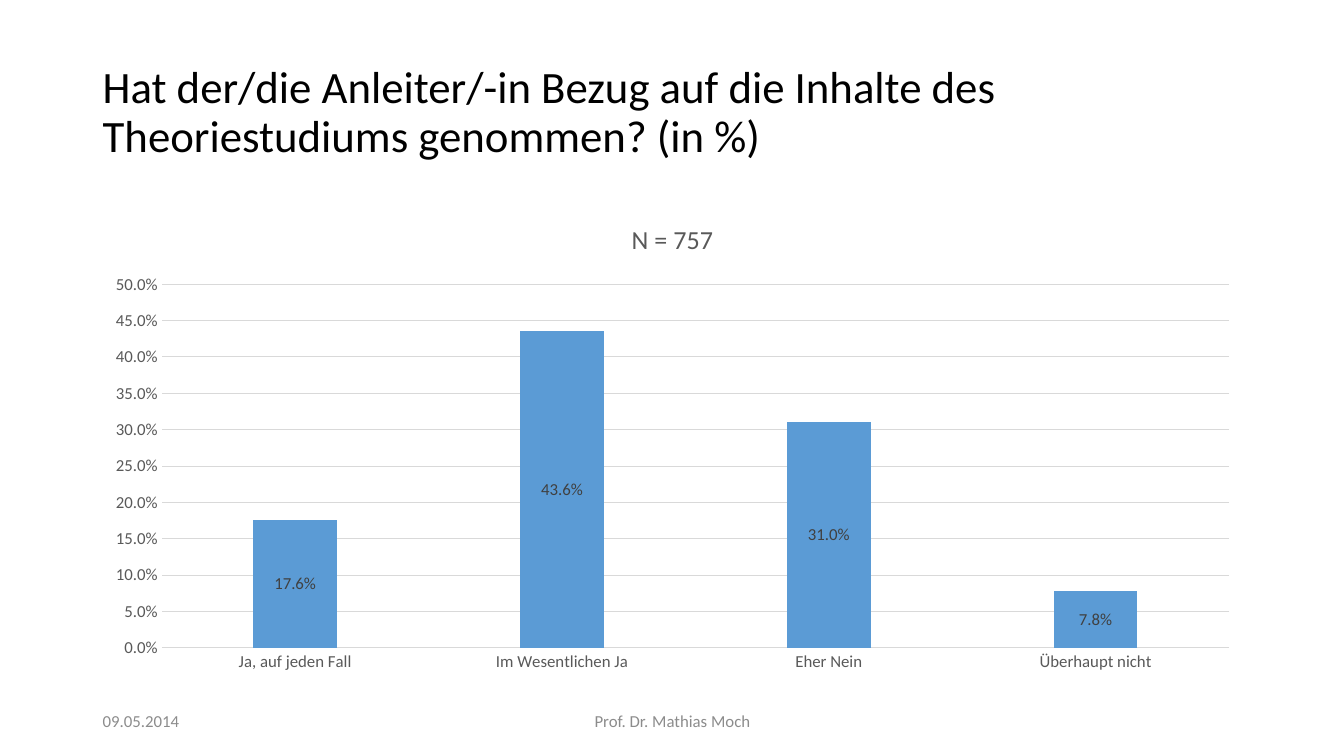
import pptx
import pptx.chart.data
import pptx.dml.color
import pptx.enum.chart
import pptx.enum.text
import pptx.util
from pptx.util import Inches

FONT = "Calibri"
COLORS = {
    "title": "000000",
    "footer": "8C8C8C",
    "axis": "595959",
    "grid": "D9D9D9",
    "bar": "5B9BD5",
    "label": "404040",
}
ANSWERS = {
    "Ja, auf jeden Fall": 0.176,
    "Im Wesentlichen Ja": 0.436,
    "Eher Nein": 0.31,
    "Überhaupt nicht": 0.078,
}
PERCENT = "0.0%"
LEFT, CONTENT_WIDTH = 0.92, 11.5


def rgb(name):
    return pptx.dml.color.RGBColor.from_string(COLORS[name])


def style_font(font, size, color):
    font.name = FONT
    font.size = pptx.util.Pt(size)
    font.bold = False
    font.color.rgb = rgb(color)


def style_line(line, color):
    line.color.rgb = rgb(color)
    line.width = pptx.util.Pt(0.75)


def add_text(slide, text, box, size, color, align="LEFT", line_spacing=1.0):
    frame = slide.shapes.add_textbox(*map(Inches, box)).text_frame
    frame.word_wrap = True
    frame.vertical_anchor = pptx.enum.text.MSO_ANCHOR.MIDDLE
    frame.text = text
    paragraph = frame.paragraphs[0]
    paragraph.alignment = pptx.enum.text.PP_ALIGN[align]
    paragraph.line_spacing = line_spacing
    style_font(paragraph.runs[0].font, size, color)


def style_axes(chart):
    for axis in (chart.category_axis, chart.value_axis):
        axis.major_tick_mark = pptx.enum.chart.XL_TICK_MARK.NONE
        axis.minor_tick_mark = pptx.enum.chart.XL_TICK_MARK.NONE
        style_font(axis.tick_labels.font, 12, "axis")
    style_line(chart.category_axis.format.line, "grid")

    shares = chart.value_axis
    shares.minimum_scale, shares.maximum_scale = 0, 0.5
    shares.major_unit = 0.05
    shares.format.line.fill.background()
    style_line(shares.major_gridlines.format.line, "grid")
    shares.tick_labels.number_format = PERCENT
    shares.tick_labels.number_format_is_linked = False


def style_bars(plot):
    plot.gap_width = 219
    plot.overlap = -27
    plot.vary_by_categories = False
    bars = plot.series[0]
    bars.format.fill.solid()
    bars.format.fill.fore_color.rgb = rgb("bar")
    labels = bars.data_labels
    labels.show_value = True
    labels.position = pptx.enum.chart.XL_LABEL_POSITION.CENTER
    labels.number_format = PERCENT
    labels.number_format_is_linked = False
    style_font(labels.font, 12, "label")


def add_answer_chart(slide, title, box):
    data = pptx.chart.data.CategoryChartData(number_format=PERCENT)
    data.categories = list(ANSWERS)
    data.add_series("Series 1", list(ANSWERS.values()))
    chart = slide.shapes.add_chart(
        pptx.enum.chart.XL_CHART_TYPE.COLUMN_CLUSTERED, *map(Inches, box), data
    ).chart
    style_font(chart.font, 10, "title")
    chart.has_legend = False
    chart.has_title = True
    chart.chart_title.include_in_layout = False
    heading = chart.chart_title.text_frame
    heading.text = title
    style_font(heading.paragraphs[0].runs[0].font, 18.6, "axis")
    style_axes(chart)
    style_bars(chart.plots[0])


def main():
    deck = pptx.Presentation()
    deck.slide_width, deck.slide_height = Inches(13.33), Inches(7.5)
    slide = deck.slides.add_slide(deck.slide_layouts[6])
    add_text(
        slide,
        "Hat der/die Anleiter/-in Bezug auf die Inhalte des "
        "Theoriestudiums genommen? (in %)",
        (LEFT, 0.4, CONTENT_WIDTH, 1.45), 32, "title", line_spacing=0.9,
    )
    add_answer_chart(slide, "N = 757", (LEFT, 2, CONTENT_WIDTH, 4.76))
    add_text(slide, "09.05.2014", (LEFT, 6.95, 3, 0.4), 12, "footer")
    add_text(slide, "Prof. Dr. Mathias Moch", (4.42, 6.95, 4.5, 0.4), 12, "footer", "CENTER")
    deck.save("out.pptx")


if __name__ == "__main__":
    main()
